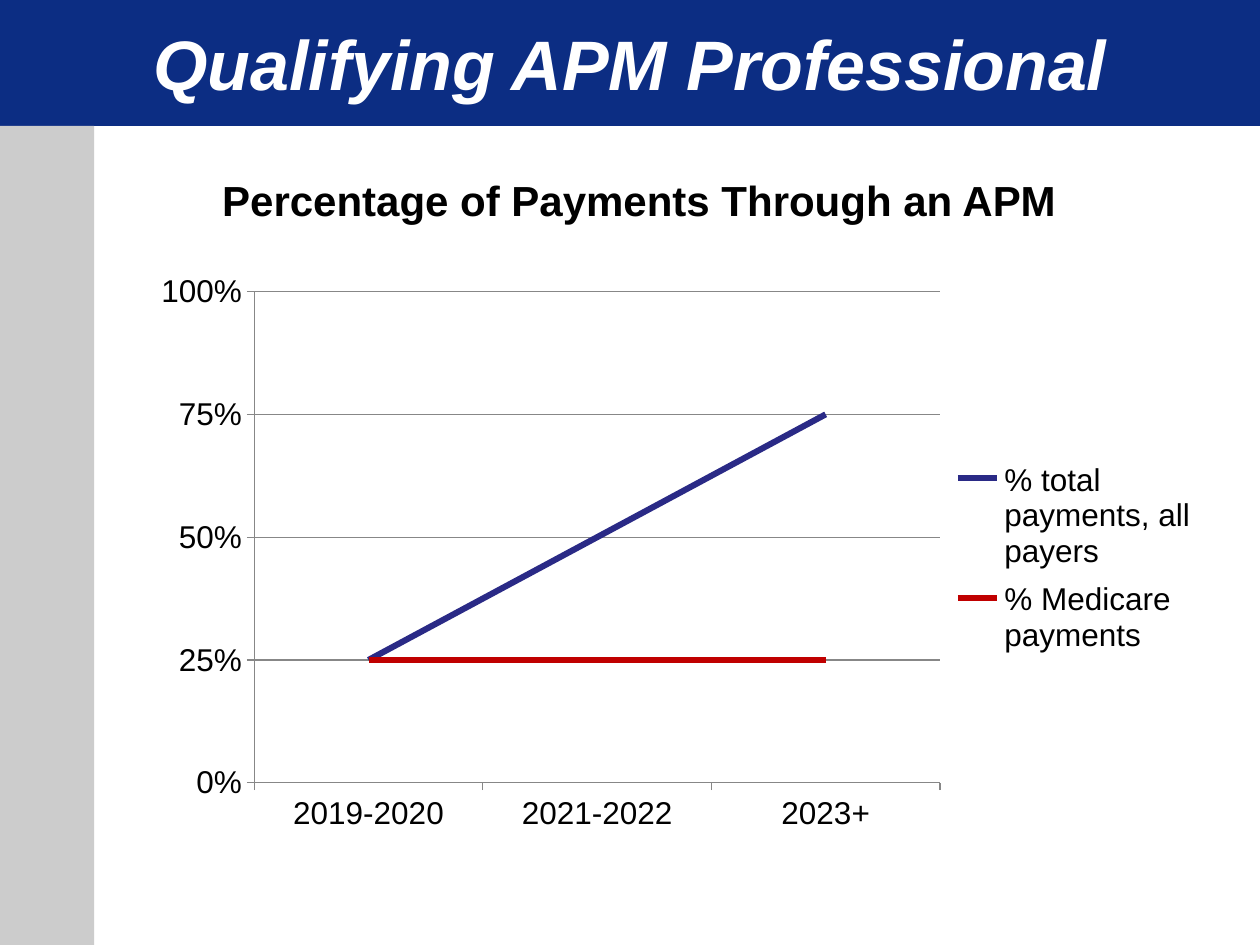
"""Build the slide on payment thresholds for a qualifying APM professional."""
import pptx
import pptx.chart.data
import pptx.dml.color
import pptx.enum.chart
import pptx.enum.shapes
import pptx.enum.text
import pptx.oxml
import pptx.oxml.ns
import pptx.util
from pptx.util import Cm

CHART_NAMESPACE = pptx.oxml.ns.nsdecls("c")
ALIGN = pptx.enum.text.PP_ALIGN
SERIES = [
    ("% total payments, all payers", (0.25, 0.5, 0.75), "2A2A86"),
    ("% Medicare payments", (0.25, 0.25, 0.25), "C00000"),
]


def color(value):
    return pptx.dml.color.RGBColor.from_string(value)


def style_font(font, size, fill="000000", bold=False, italic=False):
    font.name = "Arial"
    font.size = pptx.util.Pt(size)
    font.bold = bold
    font.italic = italic
    font.color.rgb = color(fill)


def write_text(frame, text, align=ALIGN.LEFT, **font_format):
    frame.word_wrap = True
    paragraph = frame.paragraphs[0]
    paragraph.alignment = align
    run = paragraph.add_run()
    run.text = text
    style_font(run.font, **font_format)


def style_line(line, fill, width):
    line.color.rgb = color(fill)
    line.width = pptx.util.Pt(width)


def place_part(part, index, box, target=""):
    for layout in part.findall(pptx.oxml.ns.qn("c:layout")):
        part.remove(layout)
    modes = '<c:xMode val="edge"/><c:yMode val="edge"/>'
    values = "".join(f'<c:{key} val="{value}"/>' for key, value in zip("xywh", box))
    part.insert(index, pptx.oxml.parse_xml(
        f"<c:layout {CHART_NAMESPACE}><c:manualLayout>{target}{modes}{values}"
        "</c:manualLayout></c:layout>"))


class SlideBuilder:
    grid = "878787"

    def __init__(self, presentation):
        self.slide = presentation.slides.add_slide(presentation.slide_layouts[5])

    def band(self, left, top, width, height, fill):
        shape = self.slide.shapes.add_shape(
            pptx.enum.shapes.MSO_SHAPE.RECTANGLE, Cm(left), Cm(top), Cm(width), Cm(height))
        shape.shadow.inherit = False
        shape.fill.solid()
        shape.fill.fore_color.rgb = color(fill)
        shape.line.fill.background()

    def title(self, text, width, height):
        title = self.slide.shapes.title
        title.left, title.top, title.width, title.height = 0, 0, Cm(width), Cm(height)
        title.text_frame.vertical_anchor = pptx.enum.text.MSO_ANCHOR.MIDDLE
        write_text(title.text_frame, text, ALIGN.CENTER,
                   size=40, fill="FFFFFF", bold=True, italic=True)
        self.slide.shapes._spTree.append(title._element)

    def heading(self, text, left, top, width, height):
        shape = self.slide.shapes.add_textbox(Cm(left), Cm(top), Cm(width), Cm(height))
        write_text(shape.text_frame, text, size=24, bold=True)

    def line_chart(self, categories, series_rows, left, top, width, height):
        data = pptx.chart.data.CategoryChartData(number_format="0%")
        data.categories = categories
        for name, values, _ in series_rows:
            data.add_series(name, values)
        chart = self.slide.shapes.add_chart(
            pptx.enum.chart.XL_CHART_TYPE.LINE,
            Cm(left), Cm(top), Cm(width), Cm(height), data).chart
        chart.has_title = False
        style_font(chart.font, 18)
        plot = chart.plots[0]
        plot.vary_by_categories = False
        for series, (_, _, fill) in zip(plot.series, series_rows):
            series.smooth = False
            style_line(series.format.line, fill, 3.5)
        self.axes(chart)
        chart.has_legend = True
        chart.legend.position = pptx.enum.chart.XL_LEGEND_POSITION.RIGHT
        chart.legend.include_in_layout = False
        place_part(chart.legend._element, 1, (0.75, 0.32, 0.25, 0.37))
        place_part(chart._chartSpace.chart.plotArea, 0, (0.11, 0.05, 0.64, 0.84),
                   '<c:layoutTarget val="inner"/>')

    def axes(self, chart):
        for axis in (chart.category_axis, chart.value_axis):
            axis.major_tick_mark = pptx.enum.chart.XL_TICK_MARK.OUTSIDE
            axis.minor_tick_mark = pptx.enum.chart.XL_TICK_MARK.NONE
            style_line(axis.format.line, self.grid, 0.75)
        axis = chart.value_axis
        axis.minimum_scale, axis.maximum_scale, axis.major_unit = 0, 1, 0.25
        axis.has_major_gridlines = True
        style_line(axis.major_gridlines.format.line, self.grid, 0.75)
        axis.tick_labels.number_format = "0%"
        axis.tick_labels.number_format_is_linked = False


def main():
    presentation = pptx.Presentation()
    presentation.slide_width, presentation.slide_height = Cm(25.4), Cm(19.05)
    builder = SlideBuilder(presentation)
    builder.band(0, 0, 25.4, 2.54, "0C2D83")
    builder.band(0, 2.54, 1.9, 16.51, "CCCCCC")
    builder.title("Qualifying APM Professional", 25.4, 2.54)
    builder.line_chart(("2019-2020", "2021-2022", "2023+"), SERIES, 2.75, 5.29, 21.6, 11.79)
    builder.heading("Percentage of Payments Through an APM", 4.23, 3.39, 17.58, 1.28)
    presentation.save("out.pptx")


if __name__ == "__main__":
    main()
